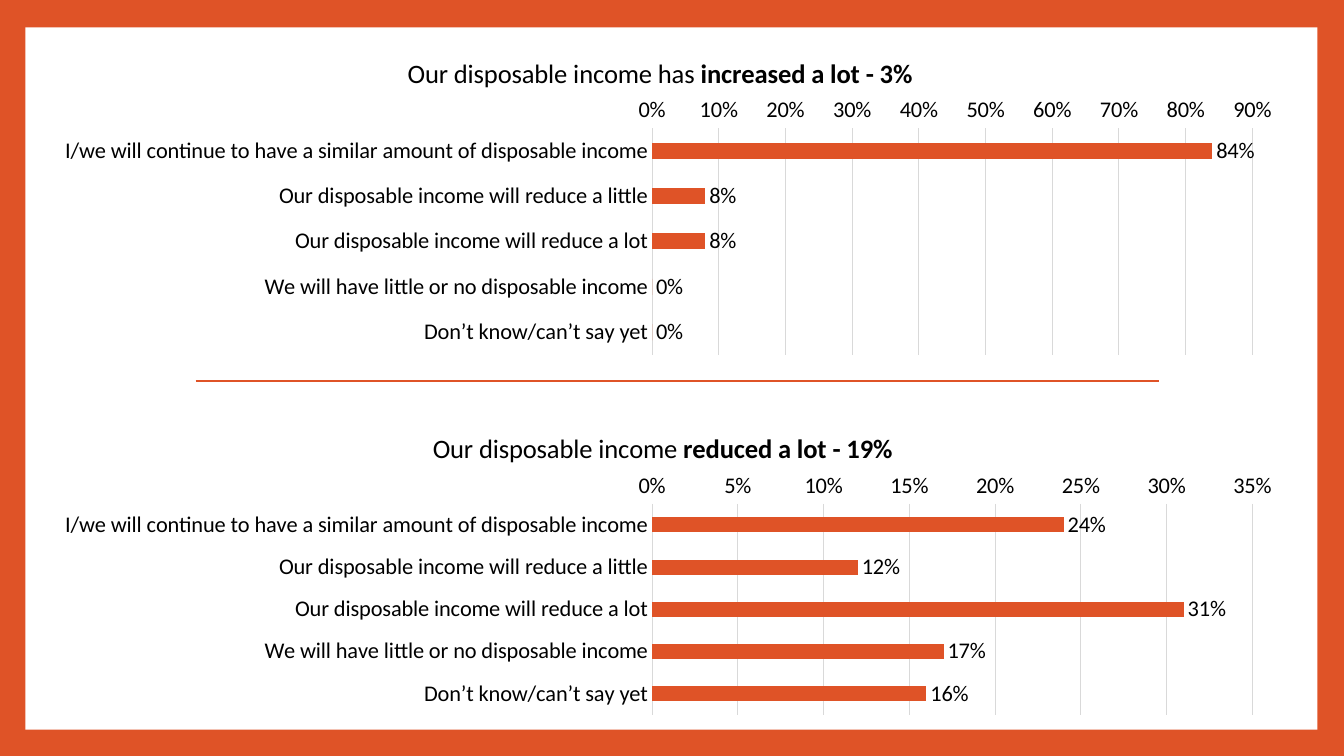
from dataclasses import dataclass

from pptx import Presentation
from pptx.chart.data import CategoryChartData
from pptx.dml.color import RGBColor
from pptx.enum.chart import XL_CHART_TYPE, XL_LABEL_POSITION, XL_TICK_MARK
from pptx.enum.shapes import MSO_CONNECTOR, MSO_SHAPE
from pptx.oxml import parse_xml
from pptx.oxml.ns import nsdecls, qn
from pptx.util import Cm, Pt

BAR_CLUSTERED = XL_CHART_TYPE.BAR_CLUSTERED
OUTSIDE_END = XL_LABEL_POSITION.OUTSIDE_END
NO_TICK = XL_TICK_MARK.NONE
STRAIGHT = MSO_CONNECTOR.STRAIGHT
RECTANGLE = MSO_SHAPE.RECTANGLE


@dataclass(frozen=True)
class Theme:
    accent: RGBColor = RGBColor(0xDF, 0x53, 0x27)
    panel: RGBColor = RGBColor(0xFF, 0xFF, 0xFF)
    text: RGBColor = RGBColor(0x00, 0x00, 0x00)
    grid: RGBColor = RGBColor(0xD9, 0xD9, 0xD9)
    font: str = "Calibri"
    title_size: float = 19
    label_size: float = 16
    grid_width: float = 0.75
    rule_width: float = 0.79


OUTLOOKS = (
    "I/we will continue to have a similar amount of disposable income",
    "Our disposable income will reduce a little",
    "Our disposable income will reduce a lot",
    "We will have little or no disposable income",
    "Don’t know/can’t say yet",
)
PLOT_LEFT, PLOT_WIDTH = 0.487, 0.478

# Plot and title positions are fractions of the chart's size.
INCOME_CHARTS = (
    dict(title=("Our disposable income has ", "increased a lot - 3%"),
         values=(0.84, 0.08, 0.08, 0, 0), maximum=0.9, step=0.1,
         top=0.89, height=8.23, title_at=(0.29, 0.055),
         plot=(PLOT_LEFT, 0.284, PLOT_WIDTH, 0.695)),
    dict(title=("Our disposable income ", "reduced a lot - 19%"),
         values=(0.24, 0.12, 0.31, 0.17, 0.16), maximum=0.35, step=0.05,
         top=10.36, height=7.82, title_at=(0.31, 0.055),
         plot=(PLOT_LEFT, 0.299, PLOT_WIDTH, 0.68)),
)


def add_span(para, text, *, font, size, color, bold=False):
    span = para.add_run()
    span.text = text
    span.font.name = font
    span.font.size = Pt(size)
    span.font.color.rgb = color
    span.font.bold = bold


def place(element, index, fractions, inner=False):
    """Give a chart part a manual layout, stored as its child at index."""
    for layout in element.findall(qn("c:layout")):
        element.remove(layout)
    target = '<c:layoutTarget val="inner"/>' if inner else ""
    modes = '<c:xMode val="edge"/><c:yMode val="edge"/>'
    sizes = "".join(f'<c:{name} val="{value}"/>'
                    for name, value in zip("xywh", fractions))
    element.insert(index, parse_xml(
        f'<c:layout {nsdecls("c")}><c:manualLayout>{target}{modes}{sizes}'
        "</c:manualLayout></c:layout>"))


class SlideBuilder:
    def __init__(self, slide, theme):
        self.slide = slide
        self.theme = theme

    def background(self):
        fill = self.slide.background.fill
        fill.solid()
        fill.fore_color.rgb = self.theme.accent

    def panel(self, left, top, width, height):
        box = self.slide.shapes.add_shape(
            RECTANGLE, Cm(left), Cm(top), Cm(width), Cm(height))
        box.shadow.inherit = False
        box.fill.solid()
        box.fill.fore_color.rgb = self.theme.panel
        box.line.fill.background()

    def rule(self, left, right, top):
        line = self.slide.shapes.add_connector(
            STRAIGHT, Cm(left), Cm(top), Cm(right), Cm(top))
        line.line.color.rgb = self.theme.accent
        line.line.width = Pt(self.theme.rule_width)
        line.element.spPr.append(parse_xml(f'<a:effectLst {nsdecls("a")}/>'))

    def style_font(self, font):
        font.name = self.theme.font
        font.size = Pt(self.theme.label_size)
        font.color.rgb = self.theme.text

    def style_grid_line(self, line):
        line.color.rgb = self.theme.grid
        line.width = Pt(self.theme.grid_width)

    def bar_chart(self, left, width, *, top, height, title, values,
                  maximum, step, title_at, plot):
        data = CategoryChartData(number_format="0%")
        data.categories = OUTLOOKS
        data.add_series("Series 1", values)
        chart = self.slide.shapes.add_chart(
            BAR_CLUSTERED, Cm(left), Cm(top), Cm(width), Cm(height), data).chart
        chart.has_legend = False
        self.style_font(chart.font)
        self.chart_title(chart, title, title_at)
        self.axes(chart, maximum, step)
        self.bars(chart.plots[0])
        place(chart._chartSpace.chart.plotArea, 0, plot, inner=True)

    def chart_title(self, chart, texts, position):
        theme = self.theme
        chart.has_title = True
        para = chart.chart_title.text_frame.paragraphs[0]
        for text, bold in zip(texts, (False, True)):
            add_span(para, text, font=theme.font, size=theme.title_size,
                     color=theme.text, bold=bold)
        chart.chart_title.include_in_layout = False
        place(chart._chartSpace.chart.find(qn("c:title")), 1, position)

    def axes(self, chart, maximum, step):
        for axis in (chart.category_axis, chart.value_axis):
            axis.major_tick_mark = NO_TICK
            axis.minor_tick_mark = NO_TICK
            self.style_font(axis.tick_labels.font)
        chart.category_axis.reverse_order = True
        self.style_grid_line(chart.category_axis.format.line)
        scale = chart.value_axis
        scale.minimum_scale = 0
        scale.maximum_scale = maximum
        scale.major_unit = step
        scale.format.line.fill.background()
        self.style_grid_line(scale.major_gridlines.format.line)
        scale.tick_labels.number_format = "0%"
        scale.tick_labels.number_format_is_linked = False

    def bars(self, plot):
        plot.gap_width = 182
        plot.vary_by_categories = False
        series = plot.series[0]
        series.format.fill.solid()
        series.format.fill.fore_color.rgb = self.theme.accent
        labels = series.data_labels
        labels.show_value = True
        labels.position = OUTSIDE_END
        labels.number_format = "0%"
        labels.number_format_is_linked = False
        self.style_font(labels.font)


def main():
    deck = Presentation()
    deck.slide_width, deck.slide_height = Cm(33.87), Cm(19.05)
    blank_layout = deck.slide_layouts[6]
    page = SlideBuilder(deck.slides.add_slide(blank_layout), Theme())
    page.background()
    page.panel(0.64, 0.69, 32.56, 17.7)
    for income_chart in INCOME_CHARTS:
        page.bar_chart(1.02, 31.65, **income_chart)
    page.rule(4.93, 29.21, 9.6)
    deck.save("out.pptx")


if __name__ == "__main__":
    main()
